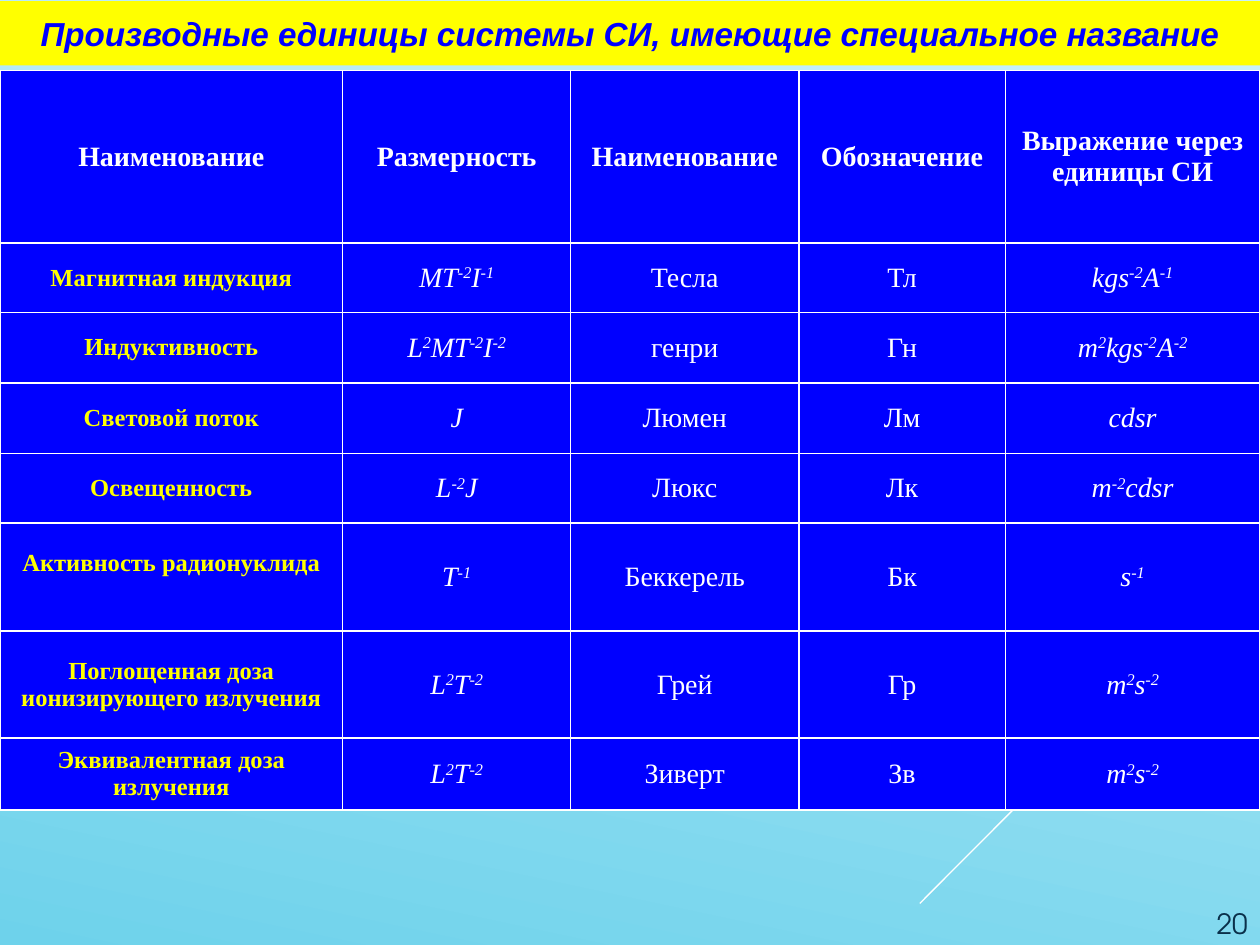
from dataclasses import dataclass
from itertools import groupby

from lxml import etree
from pptx import Presentation
from pptx.dml.color import RGBColor
from pptx.enum.shapes import MSO_CONNECTOR, MSO_SHAPE
from pptx.enum.text import MSO_ANCHOR, PP_ALIGN
from pptx.oxml import parse_xml
from pptx.oxml.ns import nsdecls, qn
from pptx.util import Inches, Pt

LINE = MSO_CONNECTOR.STRAIGHT
RECT = MSO_SHAPE.RECTANGLE
MIDDLE, BOTTOM = MSO_ANCHOR.MIDDLE, MSO_ANCHOR.BOTTOM
CENTER, RIGHT = PP_ALIGN.CENTER, PP_ALIGN.RIGHT

COLORS = {
    "white": "FFFFFF",
    "yellow": "FFFF00",
    "blue": "0000FF",
    "navy": "0A304A",
    "sky": "C8F1FB",
    "aqua": "6ED2EB",
}


@dataclass
class Style:
    size: float
    color: str
    bold: bool = False
    italic: bool = False
    face: str = "Times New Roman"
    align: PP_ALIGN = CENTER


@dataclass
class Ray:
    x1: float
    y1: float
    x2: float
    y2: float
    width: float = 0.75


@dataclass
class Unit:
    quantity: str
    dimension: str
    name: str
    symbol: str
    formula: str
    height: float


HEAD = Style(16, "white", bold=True)
QUANTITY = Style(14, "yellow", bold=True)
PLAIN = Style(16, "white")
FORMULA = Style(16, "white", italic=True)
TITLE = Style(19, "blue", bold=True, italic=True, face="Arial")
NUMBER = Style(16, "navy", face="TeX Gyre Adventor", align=RIGHT)

RAYS = [
    Ray(10, 4.26, 9.17, 5.09),
    Ray(10, 4.46, 7.3, 7.17),
    Ray(10, 4.55, 8.28, 6.27),
    Ray(9.99, 4.42, 8.42, 5.99, 2.25),
    Ray(9.99, 4.92, 8.85, 6.06, 2.25),
]

WIDTHS = [2.72, 1.81, 1.81, 1.64, 2.02]
HEADS = ["Наименование", "Размерность", "Наименование", "Обозначение",
         "Выражение через единицы СИ"]
HEAD_HEIGHT = 1.37
# Digits and minus signs in dimensions and formulas are exponents
UNITS = [
    Unit("Магнитная индукция", "MT-2I-1", "Тесла", "Тл", "kgs-2A-1", 0.55),
    Unit("Индуктивность", "L2MT-2I-2", "генри", "Гн", "m2kgs-2A-2", 0.56),
    Unit("Световой поток", "J", "Люмен", "Лм", "cdsr", 0.56),
    Unit("Освещенность", "L-2J", "Люкс", "Лк", "m-2cdsr", 0.55),
    Unit("Активность радионуклида", "T-1", "Беккерель", "Бк", "s-1", 0.86),
    Unit("Поглощенная доза ионизирующего излучения", "L2T-2", "Грей", "Гр",
         "m2s-2", 0.85),
    Unit("Эквивалентная доза излучения", "L2T-2", "Зиверт", "Зв", "m2s-2", 0.57),
]
RAISED = 5  # table row whose quantity sits above the middle


def rgb(name: str) -> RGBColor:
    return RGBColor.from_string(COLORS[name])


def is_power(char: str) -> bool:
    return char in "-0123456789"


def write(frame, text: str, style: Style, powers: bool = False) -> None:
    para = frame.paragraphs[0]
    para.alignment = style.align
    font = para.font
    font.name, font.size = style.face, Pt(style.size)
    font.bold, font.italic = style.bold, style.italic
    font.color.rgb = rgb(style.color)
    if not powers:
        para.add_run().text = text
        return
    for power, chars in groupby(text, is_power):
        run = para.add_run()
        run.text = "".join(chars)
        if power:
            run.font._element.set("baseline", "30000")


def add_ray(slide, ray: Ray) -> None:
    line = slide.shapes.add_connector(
        LINE, Inches(ray.x1), Inches(ray.y1), Inches(ray.x2), Inches(ray.y2))
    line.line.color.rgb = rgb("white")
    line.line.width = Pt(ray.width)
    etree.SubElement(line._element.spPr, qn("a:effectLst"))


def fill_cell(cell, text: str, style: Style, powers: bool = False) -> None:
    props = cell._tc.get_or_add_tcPr()
    for side in "LRTB":
        props.append(parse_xml(
            f'<a:ln{side} {nsdecls("a")} w="12700"><a:solidFill>'
            f'<a:srgbClr val="{COLORS["white"]}"/></a:solidFill></a:ln{side}>'))
    cell.fill.solid()
    cell.fill.fore_color.rgb = rgb("blue")
    cell.vertical_anchor = MIDDLE
    write(cell.text_frame, text, style, powers)


def add_units(slide) -> None:
    heights = [HEAD_HEIGHT] + [unit.height for unit in UNITS]
    table = slide.shapes.add_table(
        len(heights), len(WIDTHS), Inches(0), Inches(0.56),
        Inches(sum(WIDTHS)), Inches(sum(heights))).table
    table.first_row = table.horz_banding = False
    for col, width in zip(table.columns, WIDTHS):
        col.width = Inches(width)
    for row, height in zip(table.rows, heights):
        row.height = Inches(height)
    for col, text in enumerate(HEADS):
        fill_cell(table.cell(0, col), text, HEAD)
    for row, unit in enumerate(UNITS, 1):
        fill_cell(table.cell(row, 0), unit.quantity, QUANTITY)
        fill_cell(table.cell(row, 1), unit.dimension, FORMULA, True)
        fill_cell(table.cell(row, 2), unit.name, PLAIN)
        fill_cell(table.cell(row, 3), unit.symbol, PLAIN)
        fill_cell(table.cell(row, 4), unit.formula, FORMULA, True)
    table.cell(RAISED, 0).margin_bottom = Inches(0.27)


def main() -> None:
    deck = Presentation()
    deck.slide_width, deck.slide_height = Inches(10), Inches(7.5)
    slide = deck.slides.add_slide(deck.slide_layouts[6])

    # Background
    back = slide.background.fill
    back.gradient()
    back.gradient_angle = 258
    for stop, (name, place) in zip(back.gradient_stops,
                                   [("sky", 0.04), ("aqua", 1)]):
        stop.color.rgb = rgb(name)
        stop.position = place
    for ray in RAYS:
        add_ray(slide, ray)

    # Slide number
    box = slide.shapes.add_textbox(
        Inches(9.06), Inches(6.78), Inches(0.94), Inches(0.73))
    box.text_frame.word_wrap = True
    box.text_frame.vertical_anchor = BOTTOM
    write(box.text_frame, "20", NUMBER)

    # Table of units
    add_units(slide)

    # Title band
    band = slide.shapes.add_shape(
        RECT, Inches(0), Inches(0.01), Inches(10), Inches(0.51))
    band.shadow.inherit = False
    band.fill.solid()
    band.fill.fore_color.rgb = rgb("yellow")
    band.line.fill.background()
    band.text_frame.word_wrap = True
    band.text_frame.vertical_anchor = MIDDLE
    write(band.text_frame,
          "Производные единицы системы СИ, имеющие специальное название", TITLE)

    deck.save("out.pptx")


if __name__ == "__main__":
    main()
